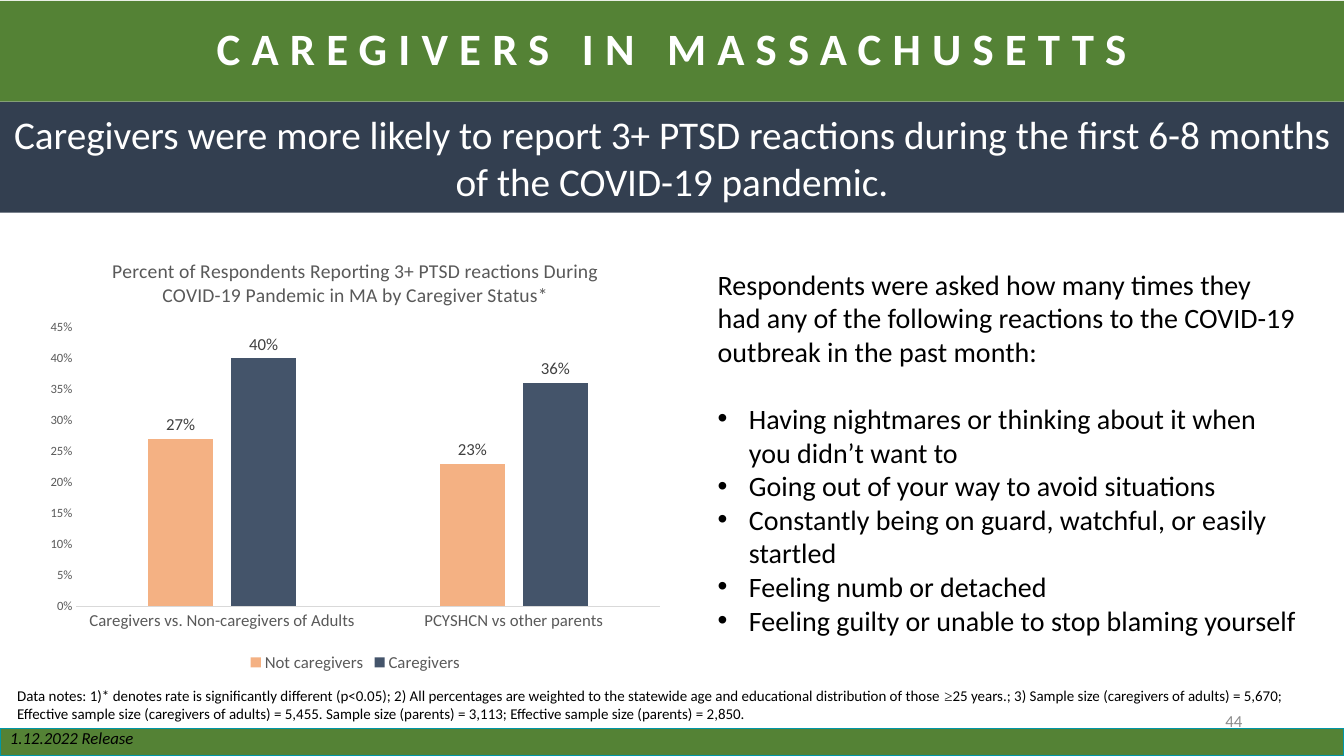
from dataclasses import dataclass

from lxml.etree import SubElement
from pptx import Presentation
from pptx.chart.data import CategoryChartData
from pptx.dml.color import RGBColor
from pptx.enum.chart import XL_CHART_TYPE as ChartType, XL_LABEL_POSITION as LabelPosition
from pptx.enum.chart import XL_LEGEND_POSITION as LegendPosition, XL_TICK_MARK as TickMark
from pptx.enum.shapes import MSO_SHAPE as Preset
from pptx.enum.text import MSO_ANCHOR as Anchor, PP_ALIGN as Align
from pptx.oxml.ns import qn
from pptx.util import Pt

PX = 9144


@dataclass(frozen=True)
class Theme:
    """Colours, fonts and type sizes of the slide."""
    green: str = "548235"
    navy: str = "333F50"
    teal: str = "0097A7"
    white: str = "FFFFFF"
    black: str = "000000"
    page_grey: str = "8C8C8C"
    chart_text: str = "595959"
    label_text: str = "404040"
    axis_line: str = "D9D9D9"
    series: tuple = ("F4B183", "44546A")
    font: str = "Calibri"
    symbol_font: str = "Times New Roman"
    banner: float = 32
    headline: float = 28
    body: float = 20
    chart_title: float = 14
    small: float = 12
    notes: float = 10.7
    ticks: float = 9


THEME = Theme()


def px(*lengths):
    """Turn pixel lengths into EMU."""
    return [length * PX for length in lengths]


def set_font(font, size, color, bold=False, italic=False):
    """Give a font the slide's typeface and the given style."""
    font.name, font.size = THEME.font, Pt(size)
    font.bold, font.italic = bold, italic
    font.color.rgb = RGBColor.from_string(color)


def add_band(slide, box, fill, line=None):
    """Add a filled rectangle across the slide."""
    shape = slide.shapes.add_shape(Preset.RECTANGLE, *px(*box))
    shape.shadow.inherit = False
    shape.fill.solid()
    shape.fill.fore_color.rgb = RGBColor.from_string(fill)
    if line:
        shape.line.color.rgb = RGBColor.from_string(line)
        shape.line.width = Pt(1)
    else:
        shape.line.fill.background()
    return shape


def add_text_frame(slide, box, anchor=Anchor.TOP, insets=(10, 5)):
    """Add a wrapping text box and return its frame."""
    frame = slide.shapes.add_textbox(*px(*box)).text_frame
    frame.word_wrap = True
    frame.vertical_anchor = anchor
    frame.margin_left = frame.margin_right = insets[0] * PX
    frame.margin_top = frame.margin_bottom = insets[1] * PX
    return frame


def write(paragraph, text, size, color, align=Align.LEFT, **style):
    """Fill a paragraph with one run and return the run."""
    paragraph.alignment = align
    set_font(paragraph.font, size, color, **style)
    run = paragraph.add_run()
    run.text = text
    return run


def add_header(slide, box):
    """Add the green banner and the navy headline below it."""
    left, top, width, height = box
    banner_height = 100
    banner = add_band(slide, (left, top, width, banner_height), THEME.green)
    paragraph = banner.text_frame.paragraphs[0]
    paragraph.line_spacing = 0.9
    run = write(paragraph, "CAREGIVERS IN MASSACHUSETTS", THEME.banner, THEME.white, Align.CENTER, bold=True)
    run._r.get_or_add_rPr().set("spc", "800")
    headline = add_band(slide, (left, top + banner_height, width, height - banner_height), THEME.navy)
    write(headline.text_frame.paragraphs[0],
          "Caregivers were more likely to report 3+ PTSD reactions during the first 6-8 months "
          "of the COVID-19 pandemic.", THEME.headline, THEME.white, Align.CENTER)


def add_reaction_list(slide, box):
    """Add the survey question and its bulleted reactions."""
    frame = add_text_frame(slide, box)
    question = frame.paragraphs[0]
    write(question, "Respondents were asked how many times they had any of the following reactions "
          "to the COVID-19 outbreak in the past month:", THEME.body, THEME.black)
    question.space_after = Pt(24)
    for reaction in ("Having nightmares or thinking about it when you didn’t want to",
                     "Going out of your way to avoid situations",
                     "Constantly being on guard, watchful, or easily startled",
                     "Feeling numb or detached",
                     "Feeling guilty or unable to stop blaming yourself"):
        paragraph = frame.add_paragraph()
        properties = paragraph._p.get_or_add_pPr()
        properties.set("marL", str(31 * PX))
        properties.set("indent", str(-31 * PX))
        SubElement(properties, qn("a:buFont"), typeface="Arial")
        SubElement(properties, qn("a:buChar"), char="•")
        write(paragraph, reaction, THEME.body, THEME.black)


def place_plot(chart, x, y, w, h):
    """Fix the inner plot area as fractions of the chart."""
    area = chart._chartSpace.chart.plotArea
    layout = area.find(qn("c:layout"))
    if layout is None:
        layout = SubElement(area, qn("c:layout"))
        area.insert(0, layout)
    manual = SubElement(layout, qn("c:manualLayout"))
    for tag, value in (("layoutTarget", "inner"), ("xMode", "edge"), ("yMode", "edge"),
                       ("x", x), ("y", y), ("w", w), ("h", h)):
        SubElement(manual, qn(f"c:{tag}"), val=str(value))


def add_ptsd_chart(slide, box):
    """Add the clustered columns by caregiver status."""
    data = CategoryChartData(number_format="0%")
    data.categories = ["Caregivers vs. Non-caregivers of Adults", "PCYSHCN vs other parents"]
    data.add_series("Not caregivers", (0.27, 0.23))
    data.add_series("Caregivers", (0.40, 0.36))
    chart = slide.shapes.add_chart(ChartType.COLUMN_CLUSTERED, *px(*box), data).chart
    set_font(chart.font, THEME.small, THEME.chart_text)
    chart.has_title = True
    write(chart.chart_title.text_frame.paragraphs[0],
          "Percent of Respondents Reporting 3+ PTSD reactions During COVID-19 Pandemic in MA "
          "by Caregiver Status*", THEME.chart_title, THEME.chart_text, Align.CENTER)
    chart.chart_title.include_in_layout = False
    chart.has_legend = True
    chart.legend.position = LegendPosition.BOTTOM
    chart.legend.include_in_layout = False
    set_font(chart.legend.font, THEME.small, THEME.chart_text)
    place_plot(chart, 0.06, 0.2, 0.92, 0.64)

    categories, values = chart.category_axis, chart.value_axis
    for axis, size in ((categories, THEME.small), (values, THEME.ticks)):
        axis.major_tick_mark = axis.minor_tick_mark = TickMark.NONE
        axis.has_major_gridlines = False
        set_font(axis.tick_labels.font, size, THEME.chart_text)
    categories.format.line.color.rgb = RGBColor.from_string(THEME.axis_line)
    categories.format.line.width = Pt(0.75)
    values.format.line.fill.background()
    values.minimum_scale, values.maximum_scale, values.major_unit = 0, 0.45, 0.05
    values.tick_labels.number_format = "0%"
    values.tick_labels.number_format_is_linked = False

    plot = chart.plots[0]
    plot.gap_width, plot.overlap, plot.vary_by_categories = 219, -27, False
    for series, color in zip(plot.series, THEME.series):
        series.format.fill.solid()
        series.format.fill.fore_color.rgb = RGBColor.from_string(color)
        labels = series.data_labels
        labels.show_value = True
        labels.position = LabelPosition.OUTSIDE_END
        labels.number_format, labels.number_format_is_linked = "0%", False
        set_font(labels.font, THEME.small, THEME.label_text)


def add_footer(slide, box):
    """Add the data notes, release strip and page number."""
    left, top, width, height = box
    strip_top = top + 49
    add_band(slide, (left, strip_top, width, height - 49), THEME.green, THEME.teal)
    paragraph = add_text_frame(slide, (left + 4, top, width - 4, 49), insets=(13, 7)).paragraphs[0]
    write(paragraph, "Data notes: 1)* denotes rate is significantly different (p<0.05); 2) All percentages "
          "are weighted to the statewide age and educational distribution of those ",
          THEME.notes, THEME.black)
    symbol = paragraph.add_run()
    symbol.text = "≥"
    symbol.font.name = THEME.symbol_font
    paragraph.add_run().text = (
        "25 years.; 3) Sample size (caregivers of adults) = 5,670; Effective sample size (caregivers of "
        "adults) = 5,455. Sample size (parents) = 3,113; Effective sample size (parents) = 2,850.")
    release = add_text_frame(slide, (left, strip_top - 5, 300, 28), Anchor.MIDDLE)
    write(release.paragraphs[0], "1.12.2022 Release", THEME.small, THEME.black, italic=True)
    number = add_text_frame(slide, (left + 942, top + 21, 300, 40), Anchor.MIDDLE)
    write(number.paragraphs[0], "44", THEME.small, THEME.page_grey, Align.RIGHT)


def main():
    """Build and save the slide."""
    presentation = Presentation()
    presentation.slide_width, presentation.slide_height = px(1333, 750)
    slide = presentation.slides.add_slide(presentation.slide_layouts[6])
    add_header(slide, (0, 1, 1333, 210))
    add_ptsd_chart(slide, (38, 238, 629, 433))
    add_reaction_list(slide, (702, 260, 594, 380))
    add_footer(slide, (0, 674, 1333, 76))
    presentation.save("out.pptx")


if __name__ == "__main__":
    main()
